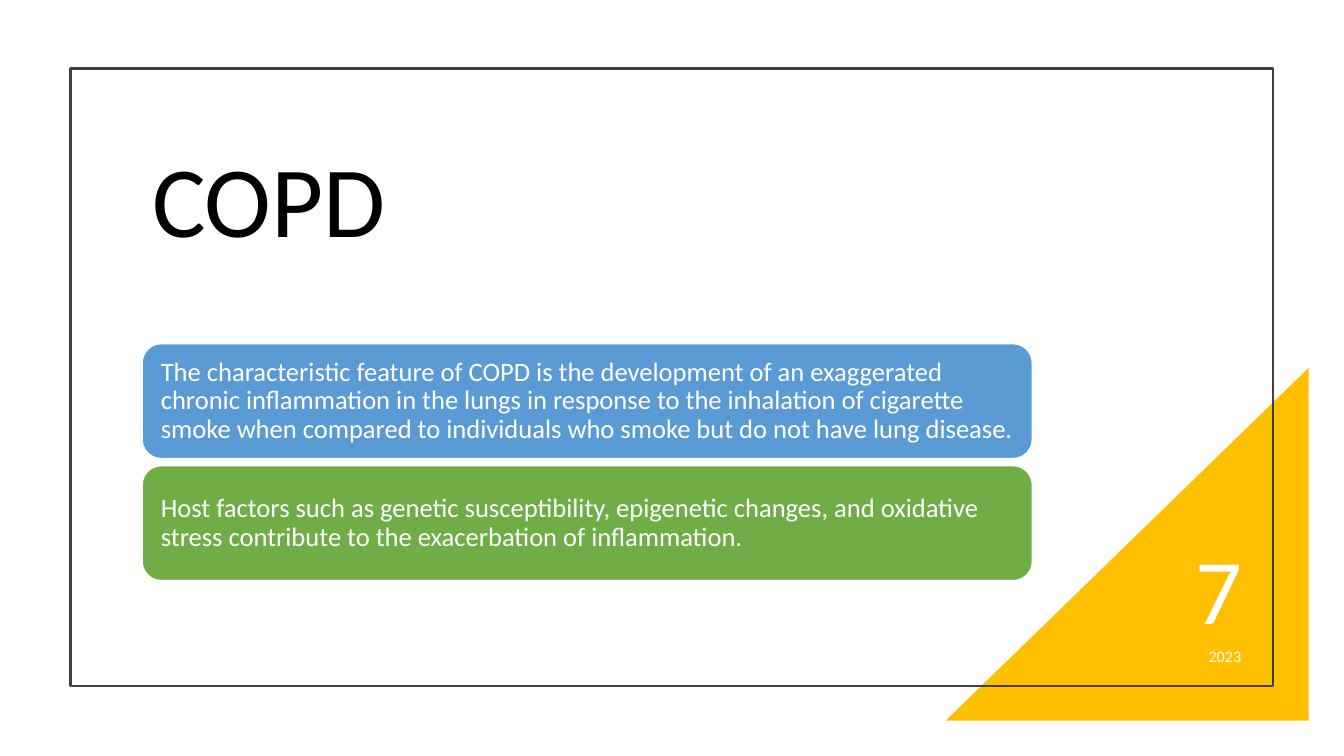
from pptx import Presentation
from pptx.dml.color import RGBColor
from pptx.enum.shapes import MSO_SHAPE
from pptx.enum.text import MSO_ANCHOR, PP_ALIGN
from pptx.util import Inches, Pt

FONT = "Calibri"
LEFT, WIDTH = 1.41, 8.83  # column shared by title and cards
CARD_TOP, CARD_HEIGHT, CARD_PITCH = 3.41, 1.14, 1.21

CARDS = [
    ("5B9BD5", "The characteristic feature of COPD is the development of an "
     "exaggerated chronic inflammation in the lungs in response to the "
     "inhalation of cigarette smoke when compared to individuals who smoke "
     "but do not have lung disease."),
    ("70AD47", "Host factors such as genetic susceptibility, epigenetic "
     "changes, and oxidative stress contribute to the exacerbation of "
     "inflammation."),
]


def color(value):
    return RGBColor.from_string(value)


def set_text(sp, text, size, font_color="FFFFFF", align=PP_ALIGN.LEFT,
             line_spacing=0.9, space_after=0, inset=0.1):
    tf = sp.text_frame
    tf.word_wrap = True
    tf.vertical_anchor = MSO_ANCHOR.MIDDLE
    tf.margin_left = tf.margin_right = Inches(inset)
    p = tf.paragraphs[0]
    p.alignment = align
    p.line_spacing = line_spacing
    p.space_after = Pt(space_after)
    r = p.add_run()
    r.text = text
    r.font.name = FONT
    r.font.size = Pt(size)
    r.font.color.rgb = color(font_color)


def add_label(s, box, text, size, **fmt):
    sp = s.shapes.add_textbox(*map(Inches, box))
    set_text(sp, text, size, **fmt)


def add_block(s, kind, box, fill=None, line=None, line_width=1):
    sp = s.shapes.add_shape(kind, *map(Inches, box))
    sp.shadow.inherit = False
    if fill:
        sp.fill.solid()
        sp.fill.fore_color.rgb = color(fill)
    else:
        sp.fill.background()
    if line:
        sp.line.color.rgb = color(line)
        sp.line.width = Pt(line_width)
    else:
        sp.line.fill.background()
    return sp


def main():
    prs = Presentation()
    prs.slide_width, prs.slide_height = Inches(13.33), Inches(7.5)
    s = prs.slides.add_slide(prs.slide_layouts[6])

    # Corner triangle, right angle at the lower right, and frame
    corner = add_block(s, MSO_SHAPE.RIGHT_TRIANGLE, (9.38, 3.65, 3.6, 3.5),
                       fill="FFC000")
    corner._element.spPr.xfrm.set("flipH", "1")
    add_block(s, MSO_SHAPE.RECTANGLE, (0.7, 0.68, 11.93, 6.13),
              line="404040", line_width=1.5)

    # Title
    add_label(s, (LEFT, 1.15, WIDTH, 1.77), "COPD", 72, font_color="000000")

    # Year and slide number
    add_label(s, (9.88, 6.31, 2.53, 0.4), "2023", 11.5,
              align=PP_ALIGN.RIGHT, line_spacing=1.0, space_after=6)
    add_label(s, (10.59, 5.35, 1.83, 1.1), "7", 66,
              align=PP_ALIGN.RIGHT, space_after=6)

    # Statement cards
    for i, (fill, text) in enumerate(CARDS):
        box = (LEFT, CARD_TOP + i * CARD_PITCH, WIDTH, CARD_HEIGHT)
        card = add_block(s, MSO_SHAPE.ROUNDED_RECTANGLE, box,
                         fill=fill, line="FFFFFF")
        set_text(card, text, 19, inset=0.13)

    prs.save("out.pptx")


if __name__ == "__main__":
    main()
